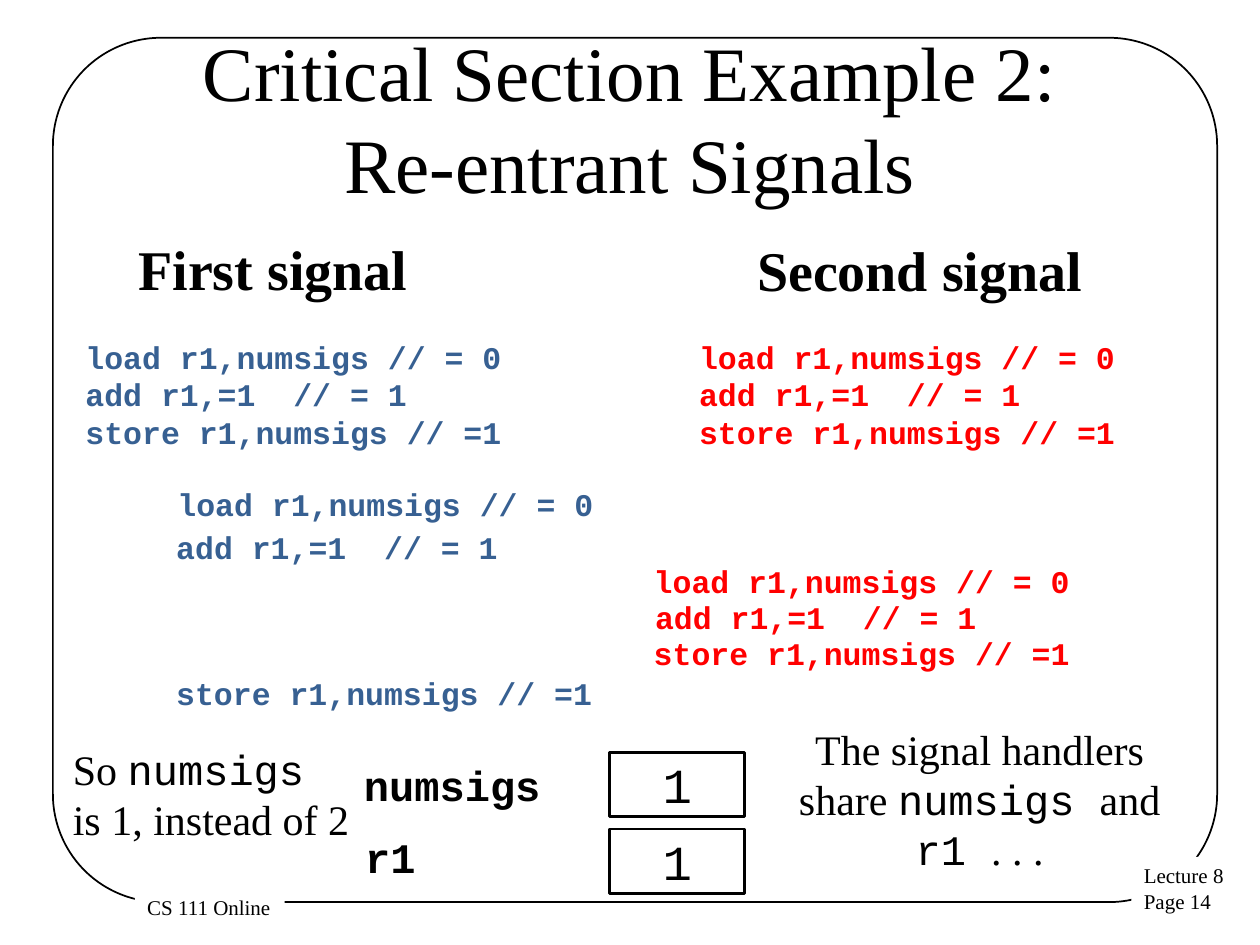
from dataclasses import dataclass

from pptx import Presentation
from pptx.dml.color import RGBColor
from pptx.enum.shapes import MSO_SHAPE
from pptx.enum.text import MSO_ANCHOR, PP_ALIGN
from pptx.util import Inches, Pt

BLACK = RGBColor(0x00, 0x00, 0x00)
WHITE = RGBColor(0xFF, 0xFF, 0xFF)
BLUE = RGBColor(0x37, 0x60, 0x92)
RED = RGBColor(0xFF, 0x00, 0x00)
SERIF, MONO = "Times New Roman", "Courier New"
LEFT, CENTER = PP_ALIGN.LEFT, PP_ALIGN.CENTER
TOP, MIDDLE = MSO_ANCHOR.TOP, MSO_ANCHOR.MIDDLE
RECTANGLE, ROUNDED = MSO_SHAPE.RECTANGLE, MSO_SHAPE.ROUNDED_RECTANGLE

LOAD = "load r1,numsigs // = 0"
ADD = "add r1,=1  // = 1"
STORE = "store r1,numsigs // =1"


@dataclass
class Box:
    left: float
    top: float
    width: float
    height: float


@dataclass
class Style:
    size: float
    font: str = SERIF
    color: RGBColor = BLACK
    bold: bool = False
    align: PP_ALIGN = LEFT
    anchor: MSO_ANCHOR = TOP
    wrap: bool = False


def lengths(box: Box) -> tuple:
    return tuple(Inches(v) for v in (box.left, box.top, box.width, box.height))


def write(frame, lines: list, style: Style) -> None:
    """Fill a frame; a line is a string or a list of (text, font) pairs."""
    frame.word_wrap = style.wrap
    frame.vertical_anchor = style.anchor
    for index, line in enumerate(lines):
        paragraph = frame.paragraphs[0] if index == 0 else frame.add_paragraph()
        paragraph.alignment = style.align
        font = paragraph.font
        font.size, font.name, font.bold = Pt(style.size), style.font, style.bold
        font.color.rgb = style.color
        pieces = [(line, style.font)] if isinstance(line, str) else line
        for text, face in pieces:
            run = paragraph.add_run()
            run.text = text
            if face != style.font:
                run.font.name = face


def add_text(slide, box: Box, lines: list, style: Style) -> None:
    write(slide.shapes.add_textbox(*lengths(box)).text_frame, lines, style)


def add_panel(slide, box: Box, kind=RECTANGLE, filled: bool = True,
              line_width: float = 0):
    panel = slide.shapes.add_shape(kind, *lengths(box))
    panel.shadow.inherit = False
    if filled:
        panel.fill.solid()
        panel.fill.fore_color.rgb = WHITE
    else:
        panel.fill.background()
    if line_width:
        panel.line.color.rgb = BLACK
        panel.line.width = Pt(line_width)
    else:
        panel.line.fill.background()
    return panel


def main() -> None:
    deck = Presentation()
    deck.slide_width, deck.slide_height = Inches(10), Inches(7.5)
    slide = deck.slides.add_slide(deck.slide_layouts[6])

    # Frame and footers
    frame = add_panel(slide, Box(0.42, 0.3, 9.24, 6.86), ROUNDED, False, 1)
    frame.adjustments[0] = 0.125
    footers = [
        (Box(8.98, 6.8, 0.84, 0.51), ["Lecture 8", "Page 14"]),
        (Box(1.07, 7.05, 1.19, 0.3), ["CS 111 Online"]),
    ]
    for box, lines in footers:
        write(add_panel(slide, box).text_frame, lines, Style(12))

    # Title and column headings
    add_text(slide, Box(0.5, 0.3, 9, 1.25),
             ["Critical Section Example 2:", "Re-entrant Signals"],
             Style(44, align=CENTER, anchor=MIDDLE, wrap=True))
    heading = Style(32, bold=True)
    add_text(slide, Box(1, 1.81, 2.36, 0.64), ["First signal"], heading)
    add_text(slide, Box(5.91, 1.82, 2.81, 0.64), ["Second signal"], heading)

    # Code of both handlers, then their interleaved steps
    first = Style(18, MONO, BLUE, bold=True)
    second = Style(18, MONO, RED, bold=True)
    code = [
        (0.58, 2.63, [LOAD, ADD, STORE], first),
        (5.45, 2.63, [LOAD, ADD, STORE], second),
        (1.31, 3.8, [LOAD], first),
        (1.3, 4.14, [ADD], first),
        (5.09, 4.41, [LOAD], second),
        (5.1, 4.7, [ADD], second),
        (5.09, 4.98, [STORE], second),
        (1.3, 5.3, [STORE], first),
    ]
    for left, top, lines, style in code:
        width = 2.78 if lines == [ADD] else 3.53
        height = 0.1 + 0.3 * len(lines)
        add_text(slide, Box(left, top, width, height), lines, style)

    # Final values
    label = Style(24, MONO, bold=True)
    value = Style(28, MONO, align=CENTER, anchor=MIDDLE, wrap=True)
    add_text(slide, Box(2.79, 5.98, 1.62, 0.5), ["numsigs"], label)
    add_text(slide, Box(2.8, 6.55, 0.61, 0.5), ["r1"], label)
    for top in (5.97, 6.58):
        cell = add_panel(slide, Box(4.84, top, 1.07, 0.51), line_width=1.5)
        write(cell.text_frame, ["1"], value)

    # Remarks
    add_text(slide, Box(6.22, 5.69, 3.11, 1.31),
             [[("The signal handlers share ", SERIF), ("numsigs ", MONO),
               ("and ", SERIF), ("r1 ", MONO), (". . .", SERIF)]],
             Style(24, align=CENTER, wrap=True))
    add_text(slide, Box(0.48, 5.85, 2.43, 0.91),
             [[("So ", SERIF), ("numsigs", MONO)], "is 1, instead of 2"],
             Style(24, wrap=True))

    deck.save("out.pptx")


if __name__ == "__main__":
    main()
